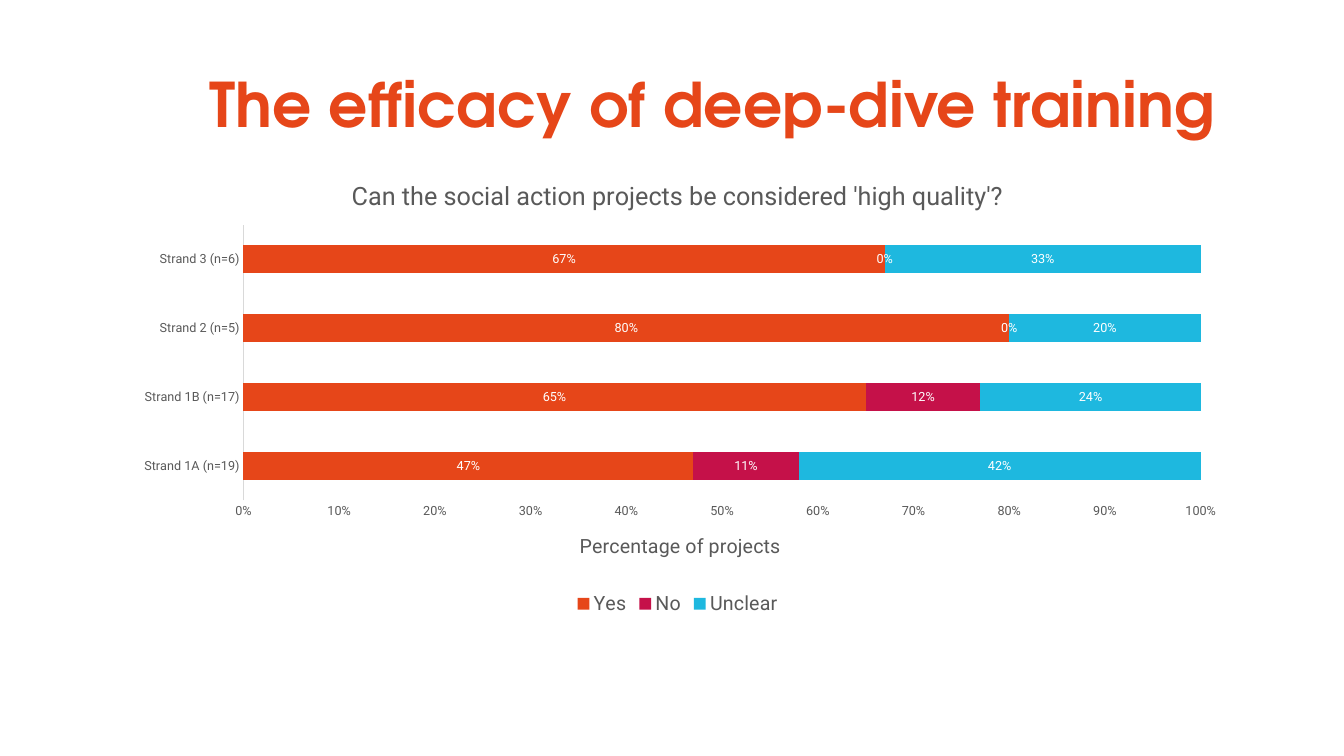
from lxml import etree
from pptx import Presentation
from pptx.chart.data import CategoryChartData
from pptx.dml.color import RGBColor
from pptx.enum.chart import XL_CHART_TYPE as ChartType
from pptx.enum.chart import XL_LABEL_POSITION as LabelPos
from pptx.enum.chart import XL_LEGEND_POSITION as LegendPos
from pptx.enum.chart import XL_TICK_MARK as TickMark
from pptx.enum.text import MSO_ANCHOR as Anchor
from pptx.enum.text import PP_ALIGN as Align
from pptx.oxml.ns import qn
from pptx.util import Inches, Pt

ORANGE = RGBColor(0xE6, 0x46, 0x19)
CRIMSON = RGBColor(0xC5, 0x11, 0x49)
SKY = RGBColor(0x1E, 0xB8, 0xDF)
GREY = RGBColor(0x59, 0x59, 0x59)
PALE_GREY = RGBColor(0xD9, 0xD9, 0xD9)
WHITE = RGBColor(0xFF, 0xFF, 0xFF)

HEADING_FONT = "TeX Gyre Adventor"
CHART_FONT = "Roboto"

STRANDS = ["Strand 1A (n=19)", "Strand 1B (n=17)", "Strand 2 (n=5)", "Strand 3 (n=6)"]
ANSWERS = [
    ("Yes", [0.47, 0.65, 0.8, 0.67], ORANGE),
    ("No", [0.11, 0.12, 0, 0], CRIMSON),
    ("Unclear", [0.42, 0.24, 0.2, 0.33], SKY),
]


def style_font(font, size, color, name=CHART_FONT, bold=False):
    font.name = name
    font.size = Pt(size)
    font.bold = bold
    font.color.rgb = color


def add_heading(slide, text):
    box = slide.shapes.add_textbox(Inches(1.66), Inches(0.1), Inches(10.81), Inches(1.84))
    frame = box.text_frame
    frame.word_wrap = True
    frame.vertical_anchor = Anchor.MIDDLE
    frame.text = text
    paragraph = frame.paragraphs[0]
    paragraph.alignment = Align.CENTER
    style_font(paragraph.runs[0].font, 43.9, ORANGE, HEADING_FONT, bold=True)


def set_title(title, text, size):
    """Fill a chart title or an axis title."""
    title.text_frame.text = text
    style_font(title.text_frame.paragraphs[0].runs[0].font, size, GREY)


def style_axis(axis):
    axis.has_major_gridlines = False
    axis.major_tick_mark = TickMark.NONE
    axis.minor_tick_mark = TickMark.NONE
    style_font(axis.tick_labels.font, 9, GREY)


def place_plot(chart, x, y, w, h):
    """Fix the inner plot area, in fractions of the chart's size."""
    plot_area = chart.element.find(".//" + qn("c:plotArea"))
    for old in plot_area.findall(qn("c:layout")):
        plot_area.remove(old)
    layout = etree.Element(qn("c:layout"))
    manual = etree.SubElement(layout, qn("c:manualLayout"))
    settings = [("layoutTarget", "inner"), ("xMode", "edge"), ("yMode", "edge"),
                ("x", x), ("y", y), ("w", w), ("h", h)]
    for tag, value in settings:
        etree.SubElement(manual, qn("c:" + tag)).set("val", str(value))
    plot_area.insert(0, layout)


def style_answer(series, color):
    series.format.fill.solid()
    series.format.fill.fore_color.rgb = color
    series.invert_if_negative = False
    labels = series.data_labels
    labels.show_value = True
    labels.position = LabelPos.CENTER
    labels.number_format = "0%"
    labels.number_format_is_linked = False
    style_font(labels.font, 9, WHITE)


def add_quality_chart(slide):
    data = CategoryChartData(number_format="0%")
    data.categories = STRANDS
    for name, shares, _ in ANSWERS:
        data.add_series(name, shares)
    chart = slide.shapes.add_chart(
        ChartType.BAR_STACKED, Inches(1.2), Inches(1.59), Inches(11.04), Inches(4.56), data
    ).chart
    style_font(chart.font, 10, GREY)
    chart.has_title = True
    set_title(chart.chart_title,
              "Can the social action projects be considered 'high quality'?", 18)

    strands = chart.category_axis
    style_axis(strands)
    strands.format.line.color.rgb = PALE_GREY
    strands.format.line.width = Pt(0.75)

    shares = chart.value_axis
    style_axis(shares)
    shares.format.line.fill.background()
    shares.minimum_scale, shares.maximum_scale, shares.major_unit = 0, 1, 0.1
    shares.tick_labels.number_format = "0%"
    shares.tick_labels.number_format_is_linked = False
    set_title(shares.axis_title, "Percentage of projects", 14)

    chart.has_legend = True
    chart.legend.position = LegendPos.BOTTOM
    chart.legend.include_in_layout = False
    style_font(chart.legend.font, 14, GREY)

    plot = chart.plots[0]
    plot.gap_width = 150
    plot.overlap = 100
    plot.vary_by_categories = False
    for series, (_, _, color) in zip(plot.series, ANSWERS):
        style_answer(series, color)
    place_plot(chart, 0.11, 0.14, 0.86, 0.6)


def main():
    prs = Presentation()
    prs.slide_width = Inches(13.33)
    prs.slide_height = Inches(7.5)
    slide = prs.slides.add_slide(prs.slide_layouts[6])
    add_heading(slide, "The efficacy of deep-dive training")
    add_quality_chart(slide)
    prs.save("out.pptx")


if __name__ == "__main__":
    main()
